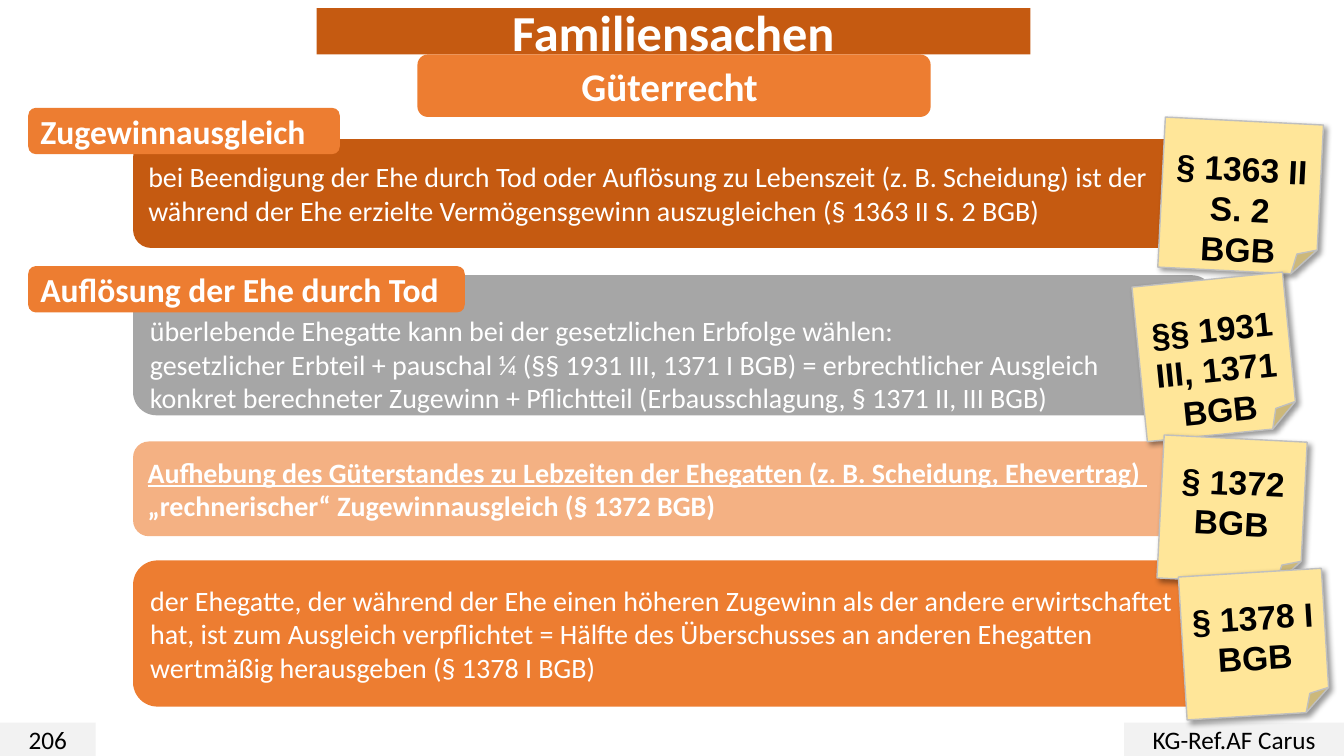
from lxml import etree
from pptx import Presentation
from pptx.dml.color import RGBColor
from pptx.enum.shapes import MSO_SHAPE as Preset
from pptx.enum.text import MSO_ANCHOR as Anchor, MSO_AUTO_SIZE as AutoSize, PP_ALIGN as Align
from pptx.oxml.ns import qn
from pptx.util import Inches, Pt

RUST = RGBColor(0xC5, 0x5A, 0x11)
ORANGE = RGBColor(0xED, 0x7D, 0x31)
PEACH = RGBColor(0xF4, 0xB1, 0x83)
GREY = RGBColor(0xA6, 0xA6, 0xA6)
PALE = RGBColor(0xF2, 0xF2, 0xF2)
YELLOW = RGBColor(0xFF, 0xE6, 0x99)
EDGE = RGBColor(0xBF, 0xBF, 0xBF)
WHITE = RGBColor(0xFF, 0xFF, 0xFF)
BLACK = RGBColor(0, 0, 0)

PANELS = [
    (1.38, 1.08, RUST, [
        "bei Beendigung der Ehe durch Tod oder Auflösung zu Lebenszeit (z. B. Scheidung) ist der "
        "während der Ehe erzielte Vermögensgewinn auszugleichen (§ 1363 II S. 2 BGB)"]),
    (5.56, 1.45, ORANGE, [
        "der Ehegatte, der während der Ehe einen höheren Zugewinn als der andere erwirtschaftet "
        "hat, ist zum Ausgleich verpflichtet = Hälfte des Überschusses an anderen Ehegatten "
        "wertmäßig herausgeben (§ 1378 I BGB)"]),
    (2.73, 1.39, GREY, [
        "überlebende Ehegatte kann bei der gesetzlichen Erbfolge wählen:",
        "gesetzlicher Erbteil + pauschal ¼ (§§ 1931 III, 1371 I BGB) = erbrechtlicher Ausgleich",
        "konkret berechneter Zugewinn + Pflichtteil (Erbausschlagung, § 1371 II, III BGB)"]),
    (4.38, 0.94, PEACH, [
        "Aufhebung des Güterstandes zu Lebzeiten der Ehegatten (z. B. Scheidung, Ehevertrag) ",
        "„rechnerischer“ Zugewinnausgleich (§ 1372 BGB)"]),
]
LABELS = [
    (1.07, 3.09, "Zugewinnausgleich"),
    (2.64, 4.33, "Auflösung der Ehe durch Tod"),
]
NOTES = [
    ((11.52, 1.2, 1.57, 1.49), 2.9, 0.27, "§ 1363 II S. 2 BGB"),
    ((11.3, 2.77, 1.5, 1.54), 354.3, 0.29, "§§ 1931 III, 1371 BGB"),
    ((11.51, 4.35, 1.42, 1.42), 2.9, 0.23, "§ 1372 BGB"),
    ((11.73, 5.68, 1.42, 1.42), 356.5, 0.24, "§ 1378 I BGB"),
]


def write(box, lines, size, color=WHITE, bold=False, align=Align.CENTER, font="Calibri"):
    frame = box.text_frame
    frame.word_wrap = True
    frame.auto_size = AutoSize.NONE
    frame.vertical_anchor = Anchor.MIDDLE
    frame.text = "\n".join(lines)
    for para in frame.paragraphs:
        para.alignment = align
        para.font.name = font
        para.font.size = Pt(size)
        para.font.bold = bold
        para.font.color.rgb = color


def add_box(page, preset, place, fill):
    box = page.shapes.add_shape(preset, *map(Inches, place))
    box.shadow.inherit = False
    box.fill.solid()
    box.fill.fore_color.rgb = fill
    box.line.fill.background()
    return box


def format_title(page, text):
    title = page.shapes.title
    title.left, title.top, title.width, title.height = map(Inches, (3.14, 0.08, 7.08, 0.46))
    title.fill.solid()
    title.fill.fore_color.rgb = RUST
    outline = etree.Element(qn("a:prstGeom"), prst="roundRect")
    etree.SubElement(outline, qn("a:avLst"))
    title.element.spPr.find(qn("a:xfrm")).addnext(outline)
    write(title, [text], 36, bold=True)


def add_panel(page, top, height, fill, lines):
    panel = add_box(page, Preset.ROUNDED_RECTANGLE, (1.32, top, 10.73, height), fill)
    write(panel, lines, 20, align=Align.LEFT)
    return panel


def add_label(page, top, width, text):
    label = add_box(page, Preset.ROUNDED_RECTANGLE, (0.28, top, width, 0.46), ORANGE)
    write(label, [text], 24, bold=True, align=Align.LEFT)


def add_footer(page, left, width, text):
    footer = add_box(page, Preset.RECTANGLE, (left, 7.17, width, 0.33), PALE)
    write(footer, [text], 18, BLACK)


def add_drop_shadow(box):
    effects = box.element.spPr.find(qn("a:effectLst"))
    shadow = etree.SubElement(effects, qn("a:outerShdw"), blurRad=str(Pt(4)), dist=str(Pt(3)),
                              dir="2700000", algn="tl", rotWithShape="0")
    color = etree.SubElement(shadow, qn("a:srgbClr"), val="000000")
    etree.SubElement(color, qn("a:alpha"), val="40000")


def add_note(page, place, angle, inset, text):
    note = add_box(page, Preset.FOLDED_CORNER, place, YELLOW)
    note.rotation = angle
    note.line.color.rgb = EDGE
    note.line.width = Pt(1)
    add_drop_shadow(note)
    write(note, [text], 24, BLACK, bold=True, font="Arial")
    note.text_frame.vertical_anchor = Anchor.TOP
    note.text_frame.margin_top = Inches(inset)


def main():
    deck = Presentation()
    deck.slide_width, deck.slide_height = Inches(13.33), Inches(7.5)
    page = deck.slides.add_slide(deck.slide_layouts[5])

    format_title(page, "Familiensachen")
    subject = add_box(page, Preset.ROUNDED_RECTANGLE, (4.14, 0.54, 5.09, 0.62), ORANGE)
    write(subject, ["Güterrecht "], 28, bold=True)
    add_footer(page, 0, 0.95, "206")
    add_footer(page, 11.15, 2.18, "KG-Ref.AF Carus")

    _, _, death, lifetime = [add_panel(page, *panel) for panel in PANELS]
    death.text_frame.margin_top = Inches(0.37)
    death.text_frame.margin_bottom = 0
    for para in lifetime.text_frame.paragraphs:
        para.font.bold = True
    lifetime.text_frame.paragraphs[0].runs[0].font.underline = True

    for label in LABELS:
        add_label(page, *label)
    for note in NOTES:
        add_note(page, *note)
    deck.save("out.pptx")


if __name__ == "__main__":
    main()
